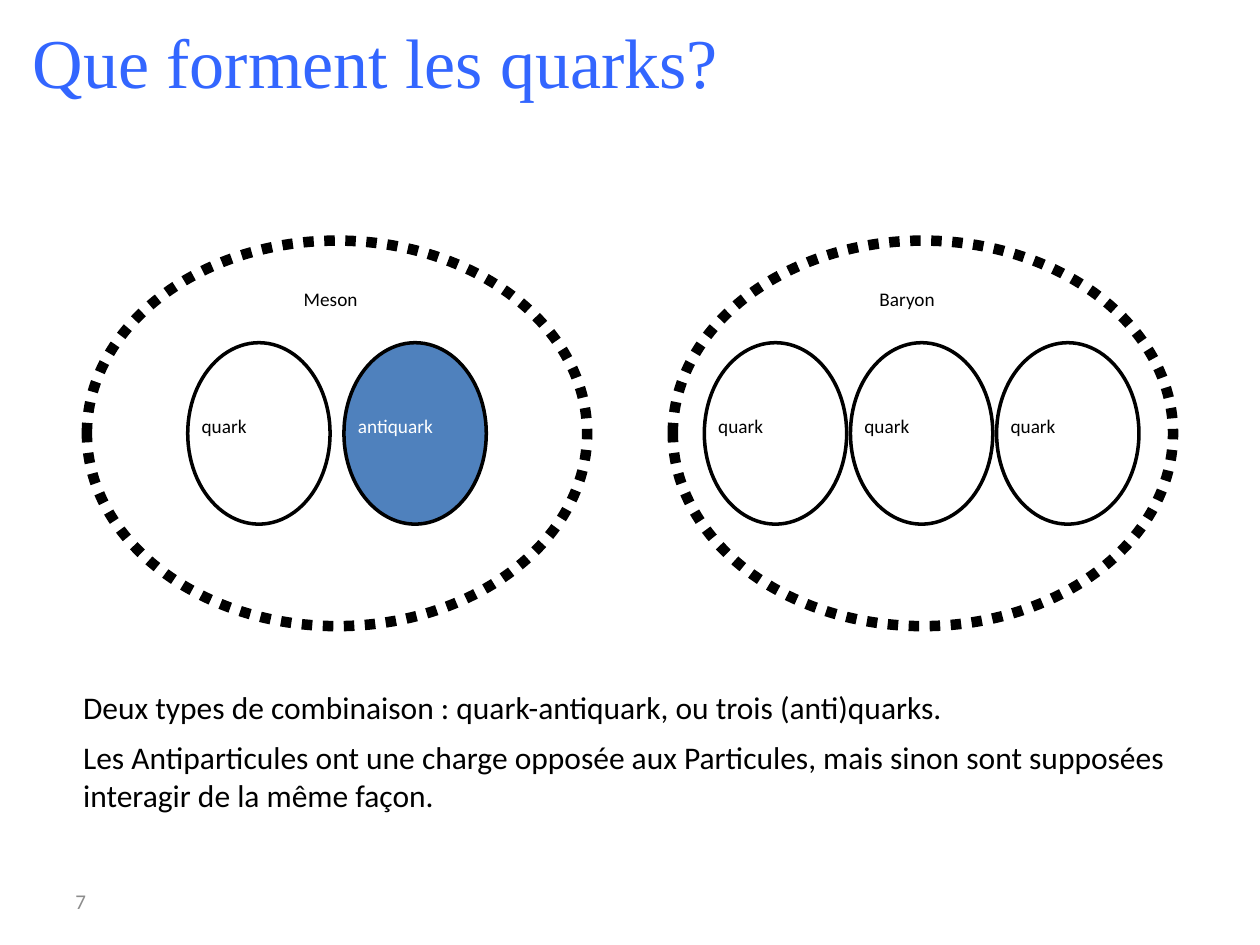
from dataclasses import dataclass

from pptx import Presentation
from pptx.dml.color import RGBColor
from pptx.enum.dml import MSO_LINE
from pptx.enum.shapes import MSO_SHAPE
from pptx.enum.text import MSO_ANCHOR, MSO_AUTO_SIZE, PP_ALIGN
from pptx.oxml.xmlchemy import OxmlElement
from pptx.util import Inches, Pt

OVAL = MSO_SHAPE.OVAL
DOTTED = MSO_LINE.ROUND_DOT
TOP, MIDDLE = MSO_ANCHOR.TOP, MSO_ANCHOR.MIDDLE
LEFT = PP_ALIGN.LEFT
NO_FIT = MSO_AUTO_SIZE.NONE


@dataclass(frozen=True)
class Theme:
    black: RGBColor = RGBColor(0x00, 0x00, 0x00)
    white: RGBColor = RGBColor(0xFF, 0xFF, 0xFF)
    blue: RGBColor = RGBColor(0x4F, 0x81, 0xBD)
    title_blue: RGBColor = RGBColor(0x33, 0x66, 0xFF)
    gray: RGBColor = RGBColor(0x8C, 0x8C, 0x8C)
    title_font: str = "Times New Roman"
    body_font: str = "Calibri"
    title_size: int = 40
    body_size: int = 18
    number_size: int = 12
    label_size: int = 11
    paragraph_gap: int = 7
    outer_line: int = 6
    inner_line: int = 2


THEME = Theme()


def place(sp, box):
    sp.left, sp.top, sp.width, sp.height = (Inches(v) for v in box)


def write(sp, paragraphs, size, color, font=THEME.body_font, inset=0, anchor=TOP):
    tf = sp.text_frame
    frame_format = {"word_wrap": True, "auto_size": NO_FIT, "vertical_anchor": anchor}
    for side in ("left", "top", "right", "bottom"):
        frame_format[f"margin_{side}"] = Inches(inset)
    for name, value in frame_format.items():
        setattr(tf, name, value)
    for i, text in enumerate(paragraphs):
        p = tf.add_paragraph() if i else tf.paragraphs[0]
        p.alignment = LEFT
        p.space_before = Pt(THEME.paragraph_gap if i else 0)
        r = p.add_run()
        r.text = text
        for name, value in {"name": font, "size": Pt(size)}.items():
            setattr(r.font, name, value)
        r.font.color.rgb = color


def add_text(shapes, box, text, size, color, **options):
    sp = shapes.add_textbox(*(Inches(v) for v in box))
    write(sp, [text], size, color, **options)
    return sp


def add_oval(shapes, box, line_width, fill=None, dash=None):
    sp = shapes.add_shape(OVAL, *(Inches(v) for v in box))
    sp.shadow.inherit = False
    if fill is None:
        sp.fill.background()
    else:
        sp.fill.solid()
        sp.fill.fore_color.rgb = fill
    sp.line.color.rgb = THEME.black
    sp.line.width = Pt(line_width)
    if dash is not None:
        sp.line.dash_style = dash


def add_particle(shapes, box, name):
    left, top, width, height = box
    is_anti = name.startswith("anti")
    add_oval(shapes, box, THEME.inner_line, fill=THEME.blue if is_anti else None)
    add_text(shapes, (left + 0.11, top + 0.57, width - 0.22, 0.32), name,
             THEME.label_size, THEME.white if is_anti else THEME.black)


def add_hadron(s, box, name, name_offset, particles, first_offset, pitch):
    """Draw a dotted oval with its name and an even row of particles."""
    left, top, width, height = box
    shapes = s.shapes.add_group_shape().shapes
    add_oval(shapes, box, THEME.outer_line, dash=DOTTED)
    add_text(shapes, (left + name_offset, top + 0.37, 0.61, 0.32), name,
             THEME.label_size, THEME.black)
    for i, particle in enumerate(particles):
        particle_box = (left + first_offset + i * pitch, top + 0.81, 1.13, 1.44)
        add_particle(shapes, particle_box, particle)


def fill_title(s, box, text):
    title = s.shapes.title
    place(title, box)
    write(title, [text], THEME.title_size, THEME.title_blue, font=THEME.title_font)


def fill_body(s, box, paragraphs):
    body = s.placeholders[1]
    place(body, box)
    write(body, paragraphs, THEME.body_size, THEME.black)
    for p in body.text_frame.paragraphs:
        pPr = p._p.get_or_add_pPr()
        pPr.set("marL", "0")
        pPr.set("indent", "0")
        pPr.append(OxmlElement("a:buNone"))


def main():
    prs = Presentation()
    prs.slide_width, prs.slide_height = Inches(10), Inches(7.5)
    s = prs.slides.add_slide(prs.slide_layouts[1])

    fill_title(s, (0.26, 0.15, 9.98, 1.04), "Que forment les quarks?")
    add_hadron(s, (0.69, 1.91, 3.97, 3.06), "Meson", 1.72,
               ["quark", "antiquark"], first_offset=0.8, pitch=1.24)
    add_hadron(s, (5.34, 1.91, 3.97, 3.06), "Baryon", 1.64,
               ["quark"] * 3, first_offset=0.25, pitch=1.16)
    fill_body(s, (0.66, 5.46, 8.89, 1.41), [
        "Deux types de combinaison : quark-antiquark, ou trois (anti)quarks.",
        "Les Antiparticules ont une charge opposée aux Particules, "
        "mais sinon sont supposées interagir de la même façon.",
    ])
    add_text(s.shapes, (0.5, 6.95, 2.33, 0.4), "7", THEME.number_size, THEME.gray,
             inset=0.1, anchor=MIDDLE)

    prs.save("out.pptx")


if __name__ == "__main__":
    main()
